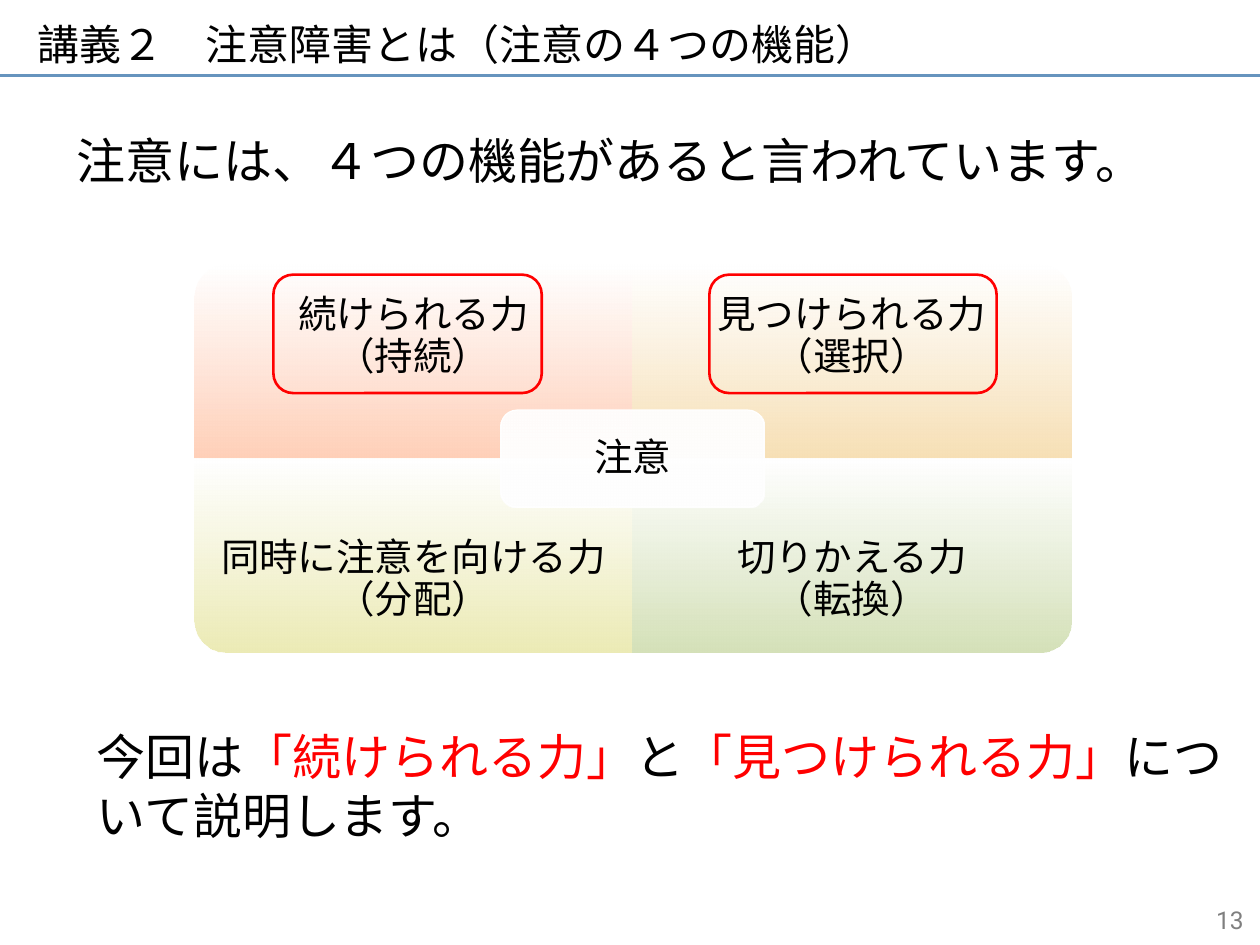
from lxml.etree import SubElement
from pptx import Presentation
from pptx.dml.color import RGBColor
from pptx.enum.shapes import MSO_CONNECTOR, MSO_SHAPE
from pptx.enum.text import MSO_ANCHOR, PP_ALIGN
from pptx.oxml.ns import qn
from pptx.util import Inches, Pt

# Content
COLORS = {"text": "000000", "accent": "FF0000", "rule": "6694BE", "number": "7F7F7F",
          "white": "FFFFFF", "coral": "FFD0B9", "orange": "F7E0B6",
          "yellow": "ECEBB6", "green": "D5E1B9"}
FONT = "Noto Sans CJK JP"
TITLE = "講義２　注意障害とは（注意の４つの機能）"
INTRO = "注意には、４つの機能があると言われています。"
CLOSING = [("今回は", "text"), ("「続けられる力」", "accent"), ("と", "text"),
           ("「見つけられる力」", "accent"), ("について説明します。", "text")]
CENTER = "注意"
PAGE_NUMBER = "13"
# text, column, row, color, rotation that turns the round corner outwards
QUADRANTS = [("続けられる力\n（持続）", 0, 0, "coral", 270),
             ("見つけられる力\n（選択）", 1, 0, "orange", 0),
             ("同時に注意を向ける力\n（分配）", 0, 1, "yellow", 180),
             ("切りかえる力\n（転換）", 1, 1, "green", 90)]
HIGHLIGHTS = [(2.17, 2.13), (5.63, 2.28)]  # left, width

# Grid of the matrix
LEFT, TOP, CELL_WIDTH, CELL_HEIGHT = 1.54, 2.1, 3.48, 1.54
LABEL_HEIGHT = CELL_HEIGHT * 0.75
CENTER_WIDTH, CENTER_HEIGHT = CELL_WIDTH * 0.6, CELL_HEIGHT / 2


def color(name):
    return RGBColor.from_string(COLORS[name])


def place(left, top, width, height):
    return [Inches(value) for value in (left, top, width, height)]


def add_text(shapes, content, area, size=28, font=FONT, tint="text", align=PP_ALIGN.LEFT,
             anchor=MSO_ANCHOR.TOP, spacing=1.0, inset=None):
    box = shapes.add_textbox(*place(*area))
    frame = box.text_frame
    frame.word_wrap = True
    frame.vertical_anchor = anchor
    if inset is not None:
        frame.margin_left = frame.margin_right = Inches(inset)
        frame.margin_top = frame.margin_bottom = Inches(inset)
    para = frame.paragraphs[0]
    para.alignment = align
    para.line_spacing = spacing
    pieces = [(content, tint)] if isinstance(content, str) else content
    for words, name in pieces:
        for index, line in enumerate(words.split("\n")):
            if index:
                para.add_line_break()
            span = para.add_run()
            span.text = line
            span.font.size = Pt(size)
            span.font.name = font
            span.font.color.rgb = color(name)
            SubElement(span.font._element, qn("a:ea")).set("typeface", font)


def add_label(shapes, content, area, inset):
    add_text(shapes, content, area, size=22, align=PP_ALIGN.CENTER,
             anchor=MSO_ANCHOR.MIDDLE, spacing=0.9, inset=inset)


def add_panel(shapes, kind, area, end, rotation=0):
    """Shape that fades from white at the top to the end color at the bottom."""
    panel = shapes.add_shape(kind, *place(*area))
    panel.shadow.inherit = False
    panel.rotation = rotation
    panel.fill.gradient()
    panel.fill.gradient_angle = 270
    panel._element.spPr.find(qn("a:gradFill")).set("rotWithShape", "0")
    for stop, position, name in zip(panel.fill.gradient_stops, (0, 1), ("white", end)):
        stop.position = position
        stop.color.rgb = color(name)
    first = panel._element.spPr.find(".//" + qn("a:srgbClr"))
    SubElement(first, qn("a:alpha")).set("val", "94000")
    panel.line.fill.background()
    return panel


deck = Presentation()
deck.slide_width, deck.slide_height = Inches(10), Inches(7.5)
page = deck.slides.add_slide(deck.slide_layouts[6])

# Title, page number and rule
add_text(page.shapes, TITLE, (0.2, 0.05, 8.89, 0.71), size=24,
         anchor=MSO_ANCHOR.MIDDLE, spacing=0.6)
add_text(page.shapes, PAGE_NUMBER, (7.64, 7.1, 2.33, 0.4), size=14, font="Roboto",
         tint="number", align=PP_ALIGN.RIGHT, anchor=MSO_ANCHOR.MIDDLE)
rule = page.shapes.add_connector(MSO_CONNECTOR.STRAIGHT, 0, Inches(0.6),
                                 deck.slide_width, Inches(0.6))
rule.line.color.rgb = color("rule")
rule.line.width = Pt(1.5)
SubElement(rule._element.spPr, qn("a:effectLst"))

# Matrix of four functions
matrix = page.shapes.add_group_shape().shapes
for words, column, row, tint, rotation in QUADRANTS:
    left, top = LEFT + column * CELL_WIDTH, TOP + row * CELL_HEIGHT
    # A quarter turn swaps width and height around the same middle
    turned = rotation % 180 == 90
    width, height = (CELL_HEIGHT, CELL_WIDTH) if turned else (CELL_WIDTH, CELL_HEIGHT)
    area = (left + (CELL_WIDTH - width) / 2, top + (CELL_HEIGHT - height) / 2, width, height)
    add_panel(matrix, MSO_SHAPE.ROUND_1_RECTANGLE, area, tint, rotation)
    label_top = top + row * (CELL_HEIGHT - LABEL_HEIGHT)
    add_label(matrix, words, (left, label_top, CELL_WIDTH, LABEL_HEIGHT), 0.17)

# Center of the matrix
center = (LEFT + CELL_WIDTH - CENTER_WIDTH / 2, TOP + CELL_HEIGHT - CENTER_HEIGHT / 2,
          CENTER_WIDTH, CENTER_HEIGHT)
hub = add_panel(matrix, MSO_SHAPE.ROUNDED_RECTANGLE, center, "white")
hub.line.color.rgb = color("white")
hub.line.width = Pt(0.75)
add_label(matrix, CENTER, center, 0.13)

# Sentences above and below
add_text(page.shapes, INTRO, (0.51, 0.99, 9.21, 1.42))
add_text(page.shapes, CLOSING, (0.67, 5.72, 9.13, 1.42))

# Frames around the functions to be explained
for left, width in HIGHLIGHTS:
    frame = page.shapes.add_shape(MSO_SHAPE.ROUNDED_RECTANGLE, *place(left, 2.18, width, 0.94))
    frame.shadow.inherit = False
    frame.fill.background()
    frame.line.color.rgb = color("accent")
    frame.line.width = Pt(1.5)

deck.save("out.pptx")
